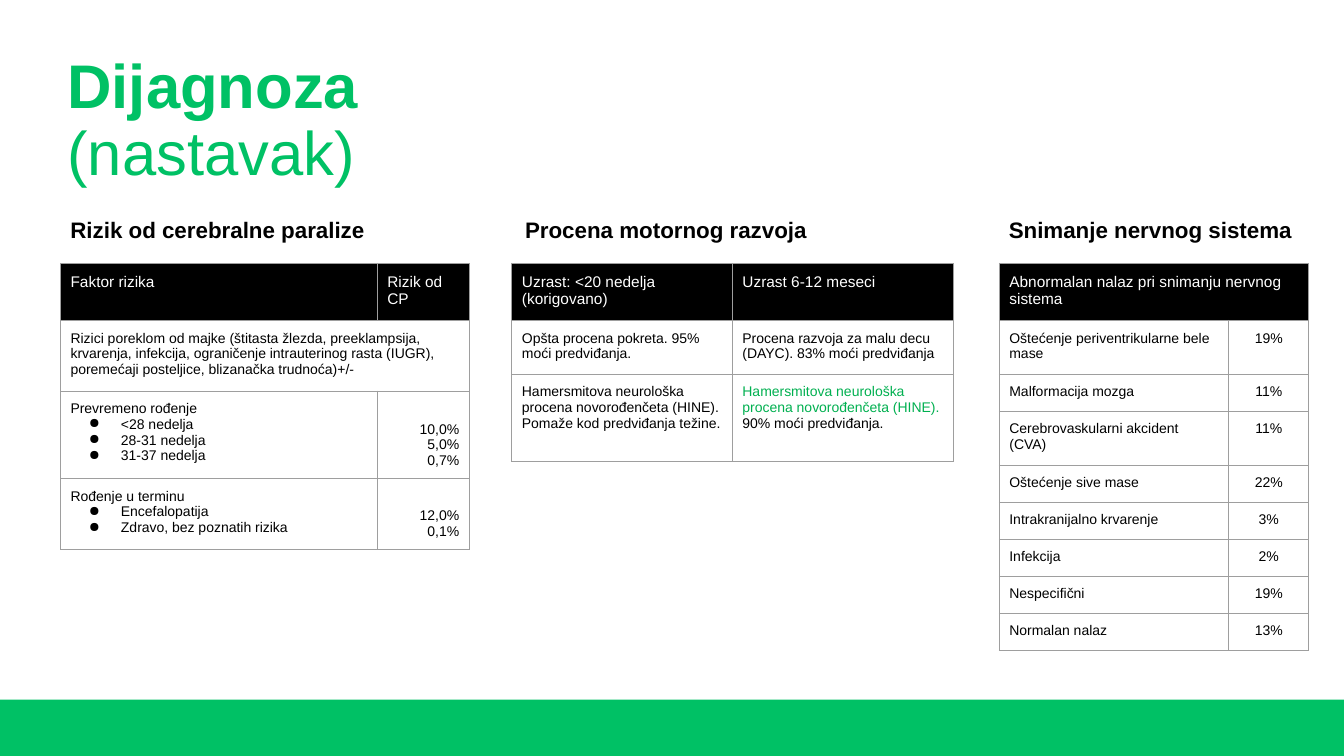
from lxml import etree
from pptx import Presentation
from pptx.dml.color import RGBColor
from pptx.enum import shapes, text
from pptx.oxml import ns
from pptx.util import Pt

GREEN, BLACK, WHITE, GREY = "00C165", "000000", "FFFFFF", "9E9E9E"
LEFT, CENTER, RIGHT = text.PP_ALIGN.LEFT, text.PP_ALIGN.CENTER, text.PP_ALIGN.RIGHT
TOP, BOTTOM = text.MSO_ANCHOR.TOP, text.MSO_ANCHOR.BOTTOM
BULLET = "● "


def paint(target, colour):
    """Colour a fill that is to be solid."""
    target.solid()
    target.fore_color.rgb = RGBColor.from_string(colour)


def add_bullet(para):
    props = para._p.get_or_add_pPr()
    props.set("marL", str(Pt(36)))
    props.set("indent", str(Pt(-23)))
    colour = etree.SubElement(props, ns.qn("a:buClr"))
    etree.SubElement(colour, ns.qn("a:srgbClr"), val=BLACK)
    etree.SubElement(props, ns.qn("a:buChar"), char=BULLET.strip())


def write(frame, lines, size=10, colour=BLACK, bold=False, align=LEFT, spacing=None):
    """Fill a frame; a line is a string or a list of (text, overrides) spans."""
    for number, line in enumerate(lines):
        para = frame.paragraphs[0] if number == 0 else frame.add_paragraph()
        if isinstance(line, str):
            if line.startswith(BULLET):
                add_bullet(para)
                line = line.removeprefix(BULLET)
            line = [(line, {})]
        para.alignment = align
        if spacing:
            para.line_spacing = spacing
        for words, changes in line:
            span = para.add_run()
            span.text = words
            span.font.name = "Arial"
            span.font.size = Pt(size)
            span.font.bold = changes.get("bold", bold)
            span.font.color.rgb = RGBColor.from_string(changes.get("colour", colour))


def add_borders(cell):
    props = cell._tc.get_or_add_tcPr()
    for side in ("lnL", "lnR", "lnT", "lnB"):
        line = etree.SubElement(props, ns.qn(f"a:{side}"), w=str(Pt(0.75)))
        fill = etree.SubElement(line, ns.qn("a:solidFill"))
        etree.SubElement(fill, ns.qn("a:srgbClr"), val=GREY)


class Page:
    def __init__(self, deck):
        self.slide = deck.slides.add_slide(deck.slide_layouts[5])

    def title(self, spans, left, top, width, height):
        box = self.slide.shapes.title
        box.left, box.top, box.width, box.height = map(Pt, (left, top, width, height))
        frame = box.text_frame
        frame.word_wrap = True
        frame.auto_size = text.MSO_AUTO_SIZE.NONE
        frame.vertical_anchor = TOP
        write(frame, [spans], size=44, colour=GREEN, spacing=0.9)

    def band(self, left, top, width, height):
        box = self.slide.shapes.add_shape(
            shapes.MSO_SHAPE.RECTANGLE, *map(Pt, (left, top, width, height)))
        box.shadow.inherit = False
        paint(box.fill, GREEN)
        box.line.fill.background()

    def heading(self, words, left, width):
        box = self.slide.shapes.add_textbox(Pt(left), Pt(151), Pt(width), Pt(26.6))
        box.text_frame.word_wrap = True
        write(box.text_frame, [words], size=16, bold=True)

    def table(self, rows, left, widths, heights, last_align=LEFT, last_anchor=TOP):
        """Add a table with a black first row; None joins a cell to the one before."""
        table = self.slide.shapes.add_table(
            len(rows), len(widths), Pt(left), Pt(188), Pt(sum(widths)), Pt(sum(heights))).table
        table.first_row = table.horz_banding = False
        for column, width in zip(table.columns, widths):
            column.width = Pt(width)
        for row, height in zip(table.rows, heights):
            row.height = Pt(height)
        for r, row in enumerate(rows):
            for c, lines in enumerate(row):
                cell = table.cell(r, c)
                cell.margin_left = cell.margin_right = Pt(7.2)
                cell.margin_top = cell.margin_bottom = Pt(7.2)
                add_borders(cell)
                if r == 0:
                    paint(cell.fill, BLACK)
                else:
                    cell.fill.background()
                if lines is None:
                    table.cell(r, c - 1).merge(cell)
                    continue
                lines = [lines] if isinstance(lines, str) else lines
                if r == 0:
                    write(cell.text_frame, lines, size=11, colour=WHITE)
                elif c == 0:
                    write(cell.text_frame, lines)
                else:
                    cell.vertical_anchor = last_anchor
                    write(cell.text_frame, lines, align=last_align)


RISKS = [
    ["Faktor rizika", "Rizik od CP"],
    ["Rizici poreklom od majke (štitasta žlezda, preeklampsija, krvarenja, infekcija, "
     "ograničenje intrauterinog rasta (IUGR), poremećaji posteljice, "
     "blizanačka trudnoća)+/-", None],
    [["Prevremeno rođenje", "● <28 nedelja", "● 28-31 nedelja", "● 31-37 nedelja"],
     ["10,0%", "5,0%", "0,7%"]],
    [["Rođenje u terminu", "● Encefalopatija", "● Zdravo, bez poznatih rizika"],
     ["12,0%", "0,1%"]],
]
MOTOR = [
    ["Uzrast: <20 nedelja (korigovano)", "Uzrast 6-12 meseci"],
    ["Opšta procena pokreta. 95% moći predviđanja.",
     "Procena razvoja za malu decu (DAYC). 83% moći predviđanja"],
    ["Hamersmitova neurološka procena novorođenčeta (HINE). Pomaže kod predviđanja težine.",
     [[("Hamersmitova neurološka procena novorođenčeta (HINE). ", {"colour": "00B050"}),
       ("90% moći predviđanja.", {})]]],
]
IMAGING = [
    ["Abnormalan nalaz pri snimanju nervnog sistema", None],
    ["Oštećenje periventrikularne bele mase", "19%"],
    ["Malformacija mozga", "11%"],
    ["Cerebrovaskularni akcident (CVA)", "11%"],
    ["Oštećenje sive mase", "22%"],
    ["Intrakranijalno krvarenje", "3%"],
    ["Infekcija", "2%"],
    ["Nespecifični", "19%"],
    ["Normalan nalaz", "13%"],
]


def main():
    deck = Presentation()
    deck.slide_width, deck.slide_height = Pt(960), Pt(540)
    page = Page(deck)
    page.band(0, 499.7, 960, 40.3)
    page.title([("Dijagnoza ", {"bold": True}), ("(nastavak)", {})], 41, 36, 394, 56)
    page.heading("Rizik od cerebralne paralize", 43.2, 287)
    page.heading("Procena motornog razvoja", 368, 261)
    page.heading("Snimanje nervnog sistema", 713.5, 221)
    page.table(RISKS, 43.2, [226.3, 65.7], [40.5, 50, 60, 49],
               last_align=RIGHT, last_anchor=BOTTOM)
    page.table(MOTOR, 365.6, [157.5, 158], [40.5, 38.4, 62.4])
    page.table(IMAGING, 713.8, [164, 57], [40.5, 38.4, 26.4, 38.4] + [26.4] * 5,
               last_align=CENTER)
    deck.save("out.pptx")


if __name__ == "__main__":
    main()
